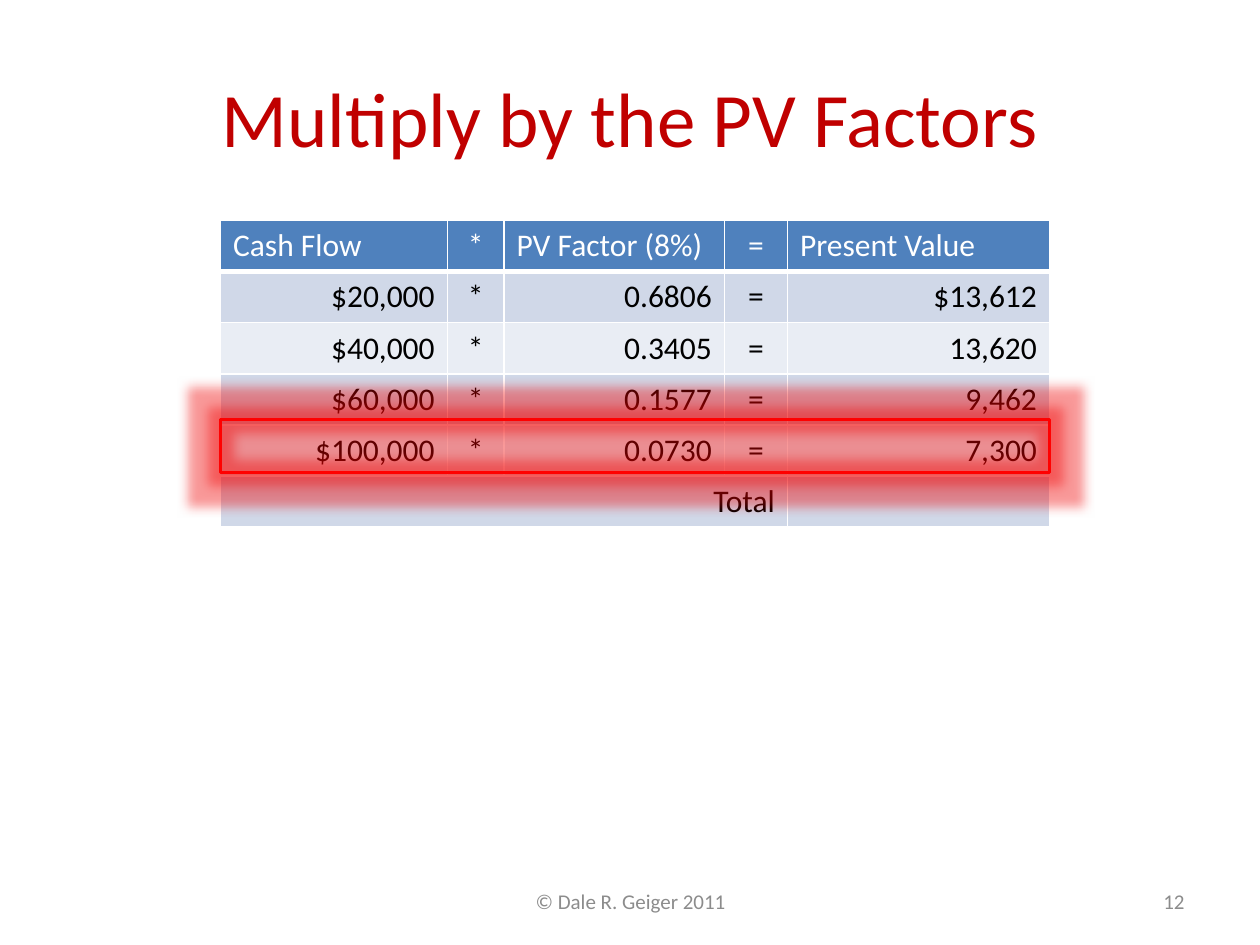
import pptx
import pptx.dml.color
import pptx.enum.shapes
import pptx.enum.text
import pptx.oxml
import pptx.oxml.ns
import pptx.util

ALIGN = pptx.enum.text.PP_ALIGN
MIDDLE = pptx.enum.text.MSO_ANCHOR.MIDDLE
FONT = "Calibri"
WIDTH, HEIGHT = 10, 7.5

# Table grid, in inches
LEFT, TOP = 1.75, 1.75
COLUMNS = [1.8, 0.45, 1.75, 0.5, 2.08]
ROW_HEIGHT = 0.405
HEADER = ["Cash Flow", "*", "PV Factor (8%)", "=", "Present Value"]
FLOWS = [
    ("$20,000", "0.6806", "$13,612"),
    ("$40,000", "0.3405", "13,620"),
    ("$60,000", "0.1577", "9,462"),
    ("$100,000", "0.0730", "7,300"),
]
HEADER_FILL, BANDS = "4F81BD", ("D0D8E8", "E9EDF4")
HIGHLIGHTED_ROW = 4


def color(value):
    return pptx.dml.color.RGBColor.from_string(value)


def inches(*values):
    return [pptx.util.Inches(value) for value in values]


def write(frame, text, size=18, ink="000000", align=ALIGN.LEFT):
    para = frame.paragraphs[0]
    para.alignment = align
    span = para.add_run()
    span.text = text
    span.font.name = FONT
    span.font.size = pptx.util.Pt(size)
    span.font.color.rgb = color(ink)


def drawing_xml(tag, attributes, content):
    namespace = pptx.oxml.ns.nsdecls("a")
    return pptx.oxml.parse_xml(f"<a:{tag} {namespace} {attributes}>{content}</a:{tag}>")


def add_title(page, text):
    title = page.shapes.title
    title.left, title.top, title.width, title.height = inches(
        0.05 * WIDTH, 0.04 * HEIGHT, 0.9 * WIDTH, 1.25)
    title.text_frame.vertical_anchor = MIDDLE
    write(title.text_frame, text, size=44, ink="C00000", align=ALIGN.CENTER)


def add_footer(page, text, left, width, align):
    box = page.shapes.add_textbox(*inches(left, 6.95, width, 0.4))
    box.text_frame.word_wrap = True
    box.text_frame.vertical_anchor = MIDDLE
    write(box.text_frame, text, size=12, ink="8C8C8C", align=align)


def format_cell(cell, fill, bottom=1):
    cell.fill.solid()
    cell.fill.fore_color.rgb = color(fill)
    # Borders stand before the fill in the cell properties
    properties = cell._tc.get_or_add_tcPr()
    for place, (side, points) in enumerate(
            {"lnL": 1, "lnR": 1, "lnT": 1, "lnB": bottom}.items()):
        properties.insert(place, drawing_xml(
            side, f'w="{pptx.util.Pt(points)}"',
            '<a:solidFill><a:srgbClr val="FFFFFF"/></a:solidFill>'))


def add_value_table(page):
    rows = [HEADER]
    rows += [(flow, "*", factor, "=", value) for flow, factor, value in FLOWS]
    rows.append(("Total", "", "", "", ""))
    table = page.shapes.add_table(
        len(rows), len(COLUMNS),
        *inches(LEFT, TOP, sum(COLUMNS), ROW_HEIGHT * len(rows))).table
    for column, width in zip(table.columns, COLUMNS):
        column.width = pptx.util.Inches(width)

    for r, row in enumerate(rows):
        table.rows[r].height = pptx.util.Inches(ROW_HEIGHT)
        is_header = r == 0
        fill = HEADER_FILL if is_header else BANDS[(r - 1) % 2]
        for c, text in enumerate(row):
            cell = table.cell(r, c)
            format_cell(cell, fill, bottom=3 if is_header else 1)
            if text in ("*", "="):
                align = ALIGN.CENTER
            else:
                align = ALIGN.LEFT if is_header else ALIGN.RIGHT
            write(cell.text_frame, text, align=align,
                  ink="FFFFFF" if is_header else "000000")

    # The total label spans every column but the last
    last = len(rows) - 1
    table.cell(last, 0).merge(table.cell(last, len(COLUMNS) - 2))


def add_highlight(page, row):
    frame = page.shapes.add_shape(
        pptx.enum.shapes.MSO_SHAPE.RECTANGLE,
        *inches(LEFT, TOP + row * ROW_HEIGHT - 0.04, sum(COLUMNS), 0.42))
    frame.fill.background()
    frame.line.color.rgb = color("FF0000")
    frame.line.width = pptx.util.Pt(2)
    frame.shadow.inherit = False
    # Soft red glow around the outline
    effects = frame._element.spPr.find(pptx.oxml.ns.qn("a:effectLst"))
    effects.append(drawing_xml(
        "glow", f'rad="{pptx.util.Inches(0.18)}"',
        '<a:srgbClr val="F00000"><a:alpha val="40000"/></a:srgbClr>'))


def main():
    deck = pptx.Presentation()
    deck.slide_width, deck.slide_height = inches(WIDTH, HEIGHT)
    page = deck.slides.add_slide(deck.slide_layouts[5])
    add_title(page, "Multiply by the PV Factors")
    add_value_table(page)
    add_footer(page, "© Dale R. Geiger 2011", 3.42, 3.17, ALIGN.CENTER)
    add_footer(page, "12", 7.17, 2.33, ALIGN.RIGHT)
    add_highlight(page, HIGHLIGHTED_ROW)
    deck.save("out.pptx")


if __name__ == "__main__":
    main()
